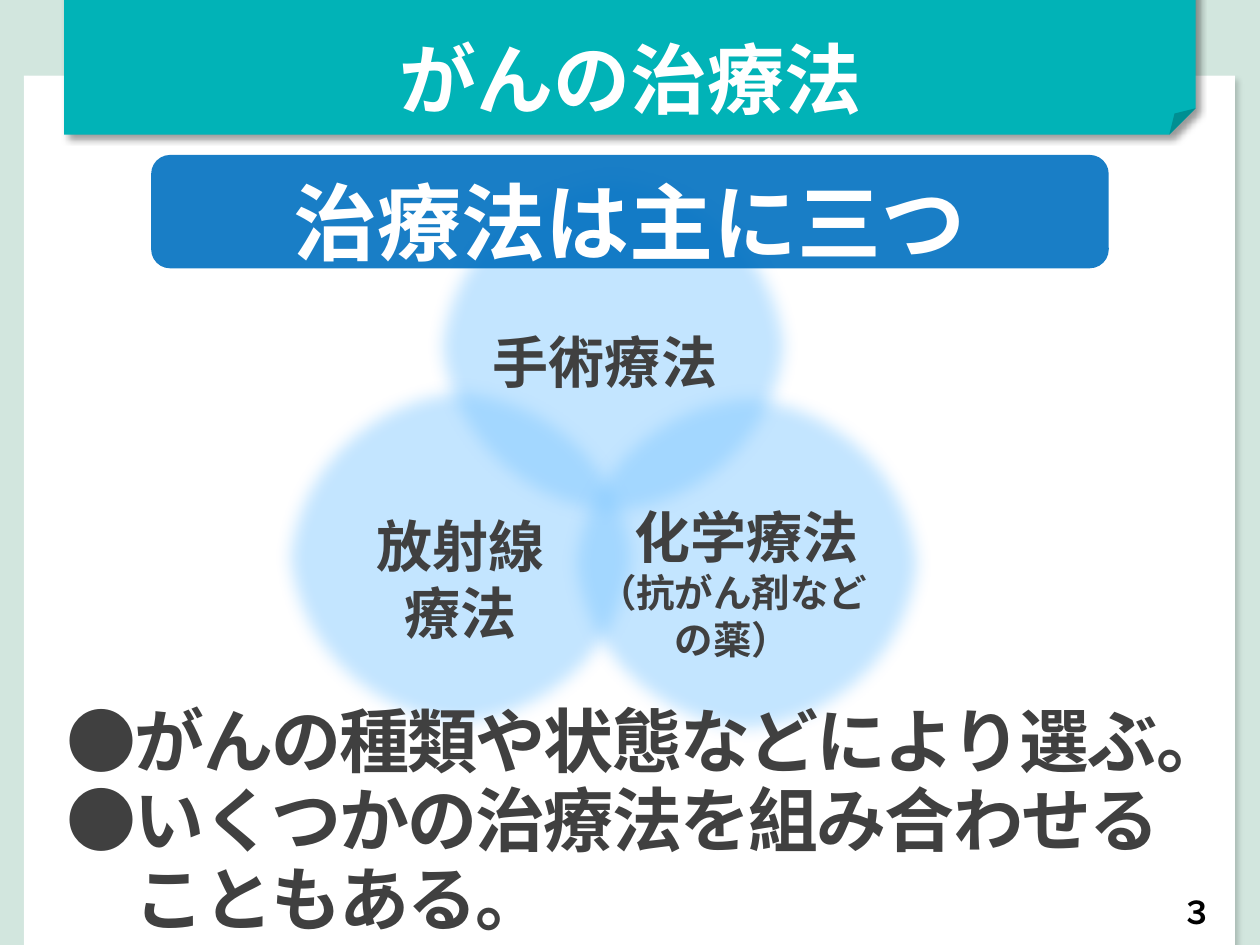
"""Build a slide on the three main cancer treatments."""
from lxml import etree
from pptx import Presentation
from pptx.dml.color import RGBColor
from pptx.enum.shapes import MSO_SHAPE
from pptx.enum.text import MSO_ANCHOR, MSO_AUTO_SIZE, PP_ALIGN
from pptx.oxml.ns import qn
from pptx.util import Inches, Pt

RECTANGLE, OVAL = MSO_SHAPE.RECTANGLE, MSO_SHAPE.OVAL
FOLDED, ROUNDED = MSO_SHAPE.FOLDED_CORNER, MSO_SHAPE.ROUNDED_RECTANGLE
TOP, MIDDLE = MSO_ANCHOR.TOP, MSO_ANCHOR.MIDDLE
CENTER, LEFT, JUSTIFY = PP_ALIGN.CENTER, PP_ALIGN.LEFT, PP_ALIGN.JUSTIFY
FONT = "Noto Sans CJK JP"
INK, WHITE, BLACK = "404040", "FFFFFF", "000000"
INSETS = (0.1, 0.05, 0.1, 0.05)

TITLE = "がんの治療法"
HEADLINE = "治療法は主に三つ"
POINTS = ["●がんの種類や状態などにより選ぶ。", "●いくつかの治療法を組み合わせる", "　こともある。"]
DRUG_NOTE = ["（抗がん剤など", "の薬）"]
PAGE_NUMBER = "３"
CIRCLE_SIZE = (2.97, 2.88)
CIRCLES = [
    (["手術療法"], (3.38, 1.31), JUSTIFY, (0.1, 0.28, 0.1, 0.05)),
    (["放射線", "療法"], (2.17, 2.98), CENTER, (0.1, 0.39, 0.1, 0.05)),
    (["化学療法"], (4.44, 3.03), CENTER, (0, 0.51, 0, 0.94)),
]
BACKDROP = [
    (RECTANGLE, (0, 0, 10, 7.5), "D2E6DE", None),
    (RECTANGLE, (0.19, 0.6, 9.61, 7.07), WHITE, (18, 3, 4)),
    (FOLDED, (0.51, -0.19, 8.98, 1.26), "01B3B7", (40, 4, 3)),
]


def color(value):
    return RGBColor.from_string(value)


def add_child(parent, tag, **attributes):
    return etree.SubElement(parent, qn(tag), {key: str(value) for key, value in attributes.items()})


def add_effect(shape, tag, **attributes):
    effects = shape.element.spPr.find(qn("a:effectLst"))
    return add_child(effects, tag, **attributes)


def add_panel(slide, kind, box, fill, opacity=100):
    shape = slide.shapes.add_shape(kind, *map(Inches, box))
    shape.shadow.inherit = False
    shape.line.fill.background()
    shape.fill.solid()
    shape.fill.fore_color.rgb = color(fill)
    if opacity < 100:
        add_child(shape.element.spPr.find(".//" + qn("a:srgbClr")), "a:alpha", val=opacity * 1000)
    return shape


def add_shadow(shape, opacity, blur, distance):
    shadow = add_effect(shape, "a:outerShdw", blurRad=Pt(blur), dist=Pt(distance),
                        dir=45 * 60000, algn="tl", rotWithShape=0)
    add_child(add_child(shadow, "a:srgbClr", val=BLACK), "a:alpha", val=opacity * 1000)


def write(shape, lines, size, fill=INK, align=CENTER, anchor=MIDDLE, insets=INSETS):
    frame = shape.text_frame
    frame.text = "\n".join(lines)
    frame.word_wrap = True
    frame.auto_size = MSO_AUTO_SIZE.NONE
    frame.vertical_anchor = anchor
    frame.margin_left, frame.margin_top, frame.margin_right, frame.margin_bottom = map(Inches, insets)
    for paragraph in frame.paragraphs:
        paragraph.alignment = align
        paragraph.space_before = Pt(0)
        font = paragraph.font
        font.name, font.size, font.bold = FONT, Pt(size), True
        font.color.rgb = color(fill)
        defaults = paragraph._p.pPr.find(qn("a:defRPr"))
        add_child(defaults, "a:ea", typeface=FONT)
    return frame


def place(shape, box):
    shape.left, shape.top, shape.width, shape.height = map(Inches, box)
    shape.element.getparent().append(shape.element)


def add_text(slide, box, *args, **options):
    write(slide.shapes.add_textbox(*map(Inches, box)), *args, **options)


def add_points(body):
    place(body, (0.43, 5.53, 9.3, 2))
    frame = write(body, POINTS, 40, align=LEFT, anchor=TOP)
    for paragraph in frame.paragraphs:
        paragraph.line_spacing = Pt(45)
        properties = paragraph._p.pPr
        properties.set("marL", str(Inches(0.59)))
        properties.set("indent", str(-Inches(0.59)))
        defaults = properties.find(qn("a:defRPr"))
        defaults.set("spc", "-100")
        defaults.addprevious(etree.Element(qn("a:buNone")))


def main():
    presentation = Presentation()
    presentation.slide_width, presentation.slide_height = Inches(10), Inches(7.5)
    slide = presentation.slides.add_slide(presentation.slide_layouts[1])
    title, body = slide.placeholders

    for kind, box, fill, shadow in BACKDROP:
        panel = add_panel(slide, kind, box, fill)
        if shadow:
            add_shadow(panel, *shadow)

    for lines, corner, align, insets in CIRCLES:
        circle = add_panel(slide, OVAL, corner + CIRCLE_SIZE, "81C9FF", 47)
        add_effect(circle, "a:softEdge", rad=Pt(10))
        write(circle, lines, 32, align=align, insets=insets)
    add_text(slide, (4.48, 4.47, 2.67, 0.84), DRUG_NOTE, 22, anchor=TOP)

    place(title, (2.41, 0.2, 5.19, 0.84))
    write(title, [TITLE], 44, WHITE, anchor=TOP)
    add_points(body)

    headline = add_panel(slide, ROUNDED, (1.2, 1.23, 7.6, 0.9), "0070C0", 90)
    write(headline, [HEADLINE], 48, WHITE, insets=(0.1, 0.2, 0.1, 0.05))
    add_text(slide, (9.27, 7.02, 0.47, 0.44), [PAGE_NUMBER], 18, BLACK)
    presentation.save("out.pptx")


if __name__ == "__main__":
    main()
